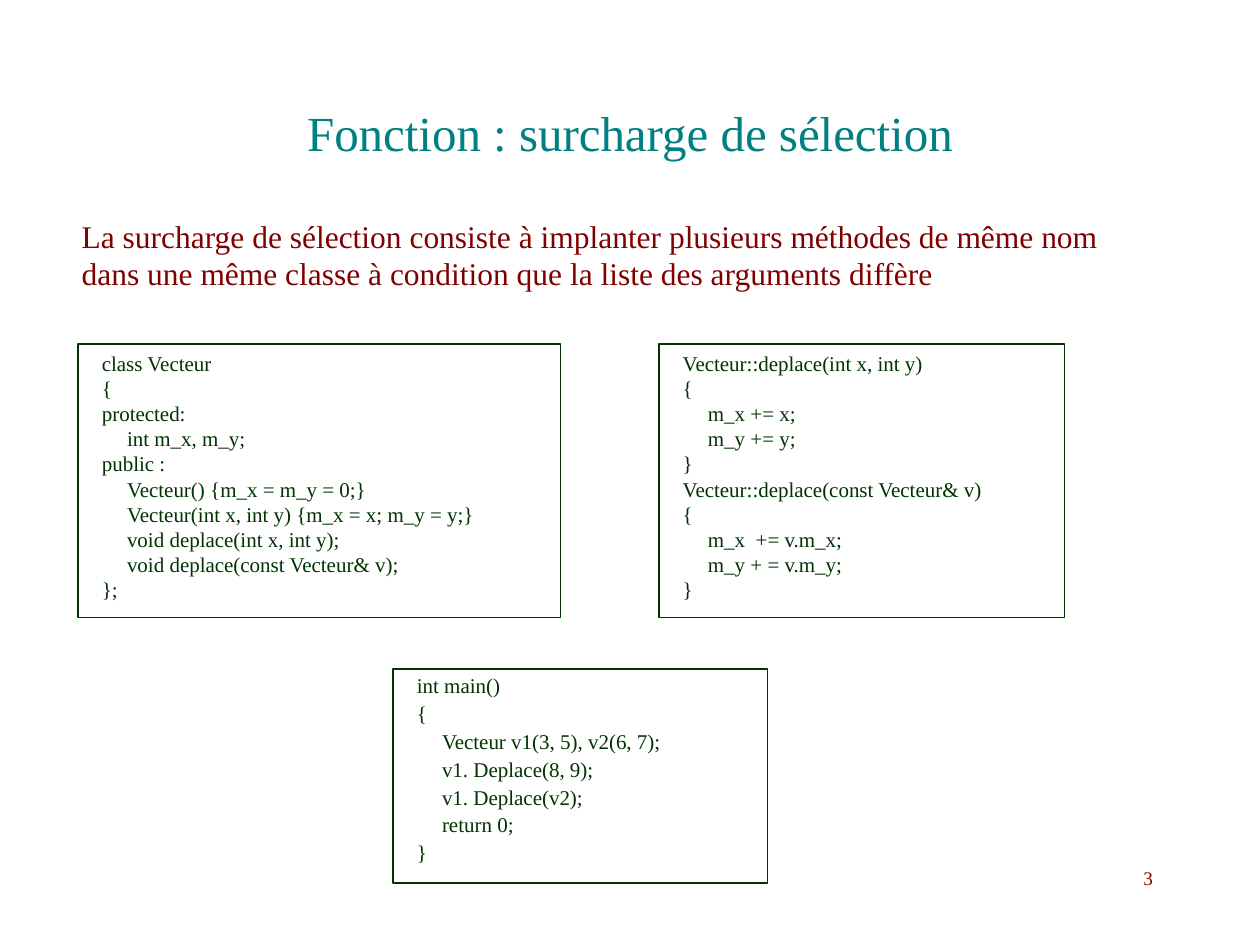
import pptx
import pptx.dml.color
import pptx.enum.shapes
import pptx.enum.text
import pptx.util

Inches = pptx.util.Inches
Pt = pptx.util.Pt
ALIGN = pptx.enum.text.PP_ALIGN
ANCHOR = pptx.enum.text.MSO_ANCHOR
COLORS = {"title": "008080", "text": "800000", "code": "003300"}

CLASS_CODE = """class Vecteur
{
protected:
\tint m_x, m_y;
public :
\tVecteur() {m_x = m_y = 0;}
\tVecteur(int x, int y) {m_x = x; m_y = y;}
\tvoid deplace(int x, int y);
\tvoid deplace(const Vecteur& v);
};"""

METHODS_CODE = """Vecteur::deplace(int x, int y)
{
\tm_x += x;
\tm_y += y;
}
Vecteur::deplace(const Vecteur& v)
{
\tm_x  += v.m_x;
\tm_y + = v.m_y;
}"""

MAIN_CODE = """int main()
{
\tVecteur v1(3, 5), v2(6, 7);
\tv1. Deplace(8, 9);
\tv1. Deplace(v2);
\treturn 0;
}"""


def color(name):
    """Return the named colour."""
    return pptx.dml.color.RGBColor.from_string(COLORS[name])


def write(box, text, size, color_name, anchor=ANCHOR.TOP, hanging=None, **formats):
    """Write one paragraph per line, with an optional (margin, indent) pair."""
    frame = box.text_frame
    frame.word_wrap = True
    frame.vertical_anchor = anchor
    for index, line in enumerate(text.split("\n")):
        para = frame.add_paragraph() if index else frame.paragraphs[0]
        for name, value in formats.items():
            setattr(para, name, value)
        if hanging:
            properties = para._p.get_or_add_pPr()
            for name, value in zip(("marL", "indent"), hanging):
                properties.set(name, str(Inches(value)))
        span = para.add_run()
        span.text = line
        for name, value in {"name": "Times New Roman", "size": Pt(size)}.items():
            setattr(span.font, name, value)
        span.font.color.rgb = color(color_name)


def add_title(page, area, text):
    """Place and fill the title placeholder."""
    title = page.shapes.title
    for name, value in zip(("left", "top", "width", "height"), area):
        setattr(title, name, Inches(value))
    write(title, text, 28, "title", ANCHOR.MIDDLE, alignment=ALIGN.CENTER)


def add_text(page, area, text, size, **formats):
    """Add a plain text box."""
    box = page.shapes.add_textbox(*map(Inches, area))
    write(box, text, size, "text", **formats)


def add_code(page, area, code, **formats):
    """Add an outlined box of code."""
    rectangle = pptx.enum.shapes.MSO_SHAPE.RECTANGLE
    box = page.shapes.add_shape(rectangle, *map(Inches, area))
    box.shadow.inherit = False
    box.fill.background()
    box.line.color.rgb = color("code")
    box.line.width = Pt(0.75)
    write(box, code, 12, "code", hanging=(0.29, -0.2), alignment=ALIGN.LEFT, **formats)


def main():
    """Build and save the slide."""
    deck = pptx.Presentation()
    deck.slide_width, deck.slide_height = Inches(10), Inches(7.5)
    page = deck.slides.add_slide(deck.slide_layouts[5])
    add_title(page, (0.75, 0.42, 8.5, 1.25), "Fonction : surcharge de sélection")
    add_text(
        page, (0.17, 1.67, 9.08, 0.92),
        "\tLa surcharge de sélection consiste à implanter plusieurs méthodes de même nom "
        "dans une même classe à condition que la liste des arguments diffère",
        18, hanging=(0.38, -0.38),
    )
    add_text(page, (7.17, 6.83, 2.08, 0.5), "3", 11, alignment=ALIGN.RIGHT)
    add_code(page, (0.62, 2.73, 3.83, 2.17), CLASS_CODE)
    add_code(page, (3.12, 5.31, 2.97, 1.7), MAIN_CODE, line_spacing=0.9, space_before=Pt(3))
    add_code(page, (5.23, 2.73, 3.22, 2.17), METHODS_CODE)
    deck.save("out.pptx")


if __name__ == "__main__":
    main()
